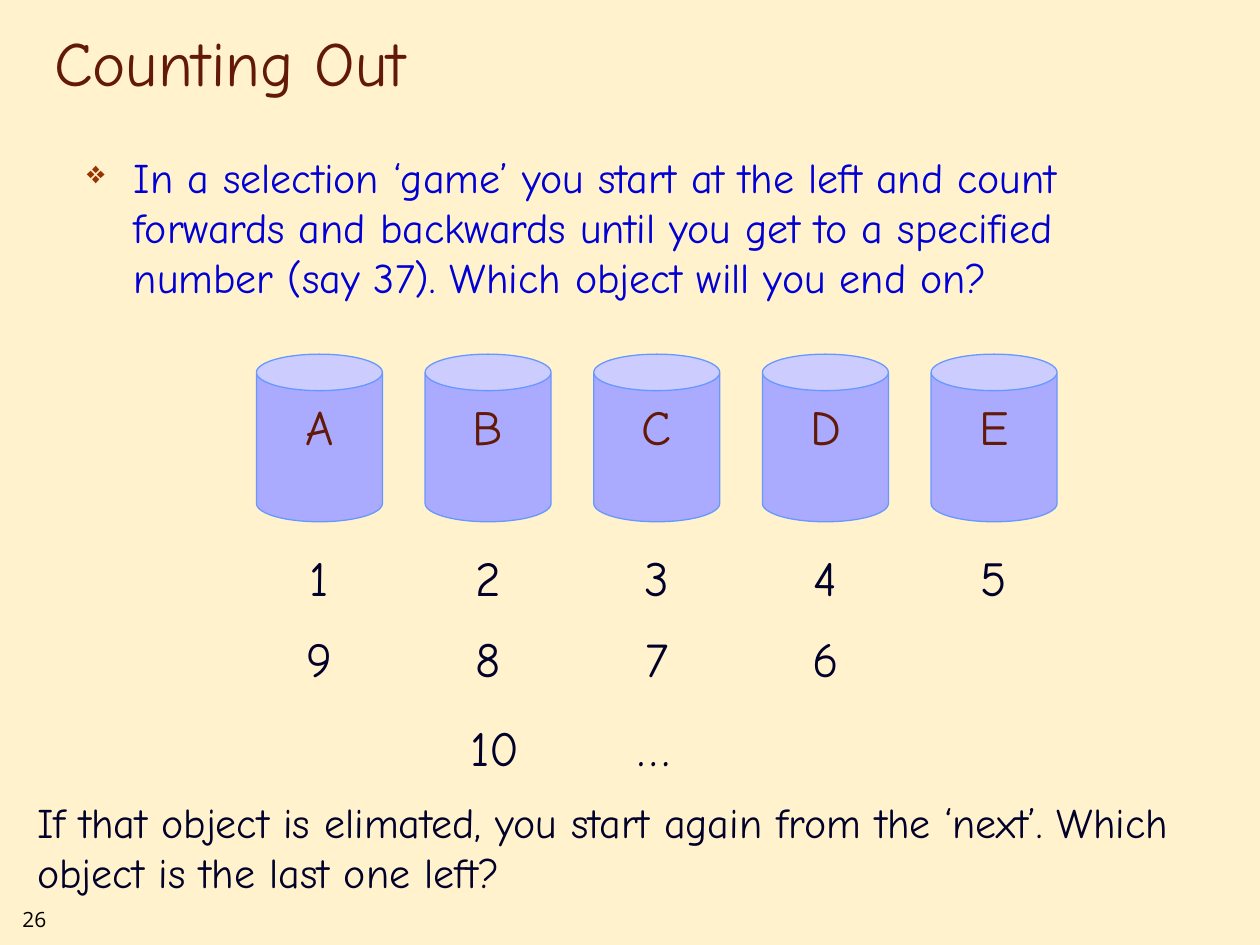
from lxml.etree import SubElement
from pptx import Presentation
from pptx.dml.color import RGBColor
from pptx.enum.shapes import MSO_SHAPE as Shape
from pptx.enum.text import MSO_ANCHOR as Anchor, PP_ALIGN as Align
from pptx.oxml.ns import qn
from pptx.util import Cm, Pt

CREAM = RGBColor(0xFF, 0xF2, 0xCC)
BROWN = RGBColor(0x63, 0x19, 0x08)
RUST = RGBColor(0x99, 0x33, 0x00)
BLUE = RGBColor(0x00, 0x00, 0xD4)
NAVY = RGBColor(0x00, 0x00, 0x2A)
BLACK = RGBColor(0x00, 0x00, 0x00)
LILAC = RGBColor(0xAA, 0xAA, 0xFF)
SKY = RGBColor(0x66, 0x99, 0xFF)

TITLE = "Counting Out"
QUESTION = (
    "In a selection ‘game’ you start at the left and count forwards and backwards "
    "until you get to a specified number (say 37). Which object will you end on?"
)
FOLLOW_UP = (
    "If that object is elimated, you start again from the ‘next’. "
    "Which object is the last one left?"
)
PAGE_NUMBER = "26"
OBJECTS = "ABCDE"
COUNT_ROWS = [
    (10.92, 1.4, [(0, "1"), (1, "2"), (2, "3"), (3, "4"), (4, "5")]),
    (12.55, 1.4, [(0, "9"), (1, "8"), (2, "7"), (3, "6")]),
    (14.33, 2.21, [(1.04, "10"), (1.98, "…")]),
]

FIRST_CENTRE, PITCH = 6.44, 3.4
CAN_TOP, CAN_WIDTH, CAN_HEIGHT = 7.14, 2.54, 3.38
COUNT_HEIGHT = 1.45


def write(shape, text, size=28, color=NAVY, font="Comic Neue",
          align=Align.LEFT, anchor=Anchor.TOP, space_before=0):
    frame = shape.text_frame
    frame.word_wrap = True
    frame.vertical_anchor = anchor
    paragraph = frame.paragraphs[0]
    paragraph.alignment = align
    paragraph.space_before = Pt(space_before)
    run = paragraph.add_run()
    run.text = text
    run.font.size = Pt(size)
    run.font.name = font
    run.font.color.rgb = color
    return paragraph


def add_text(slide, box, text, **text_format):
    shape = slide.shapes.add_textbox(*map(Cm, box))
    return write(shape, text, **text_format)


def add_bullet(paragraph, symbol, color, percent, indent):
    properties = paragraph._p.get_or_add_pPr()
    properties.set("marL", str(indent))
    properties.set("indent", str(-indent))
    bullet_color = SubElement(properties, qn("a:buClr"))
    SubElement(bullet_color, qn("a:srgbClr"), val=str(color))
    SubElement(properties, qn("a:buSzPct"), val=str(percent * 1000))
    SubElement(properties, qn("a:buChar"), char=symbol)


def add_can(slide, column, letter):
    left = FIRST_CENTRE + column * PITCH - CAN_WIDTH / 2
    can = slide.shapes.add_shape(
        Shape.CAN, Cm(left), Cm(CAN_TOP), Cm(CAN_WIDTH), Cm(CAN_HEIGHT))
    can.adjustments[0] = 0.29
    can.shadow.inherit = False
    can.fill.solid()
    can.fill.fore_color.rgb = LILAC
    can.line.color.rgb = SKY
    can.line.width = Pt(0.75)
    write(can, letter, color=BROWN, align=Align.CENTER)


def main():
    presentation = Presentation()
    presentation.slide_width, presentation.slide_height = Cm(25.4), Cm(19.05)
    slide = presentation.slides.add_slide(presentation.slide_layouts[6])
    slide.background.fill.solid()
    slide.background.fill.fore_color.rgb = CREAM

    add_text(slide, (0.2, 18.16, 1.9, 0.76), PAGE_NUMBER,
             size=12, color=BLACK, font="Open Sans")
    add_text(slide, (0.84, 0.43, 21.59, 1.7), TITLE,
             size=36, color=BROWN, anchor=Anchor.BOTTOM)
    question = add_text(slide, (1.5, 2.92, 22.4, 5), QUESTION,
                        size=24, color=BLUE, space_before=4.8)
    add_bullet(question, "❖", RUST, 75, Cm(0.95))

    for column, letter in enumerate(OBJECTS):
        add_can(slide, column, letter)
    for top, width, counts in COUNT_ROWS:
        for column, count in counts:
            left = FIRST_CENTRE + column * PITCH - width / 2
            add_text(slide, (left, top, width, COUNT_HEIGHT), count, align=Align.CENTER)

    add_text(slide, (0.5, 15.93, 24.4, 2.31), FOLLOW_UP, size=24)
    presentation.save("out.pptx")


if __name__ == "__main__":
    main()
